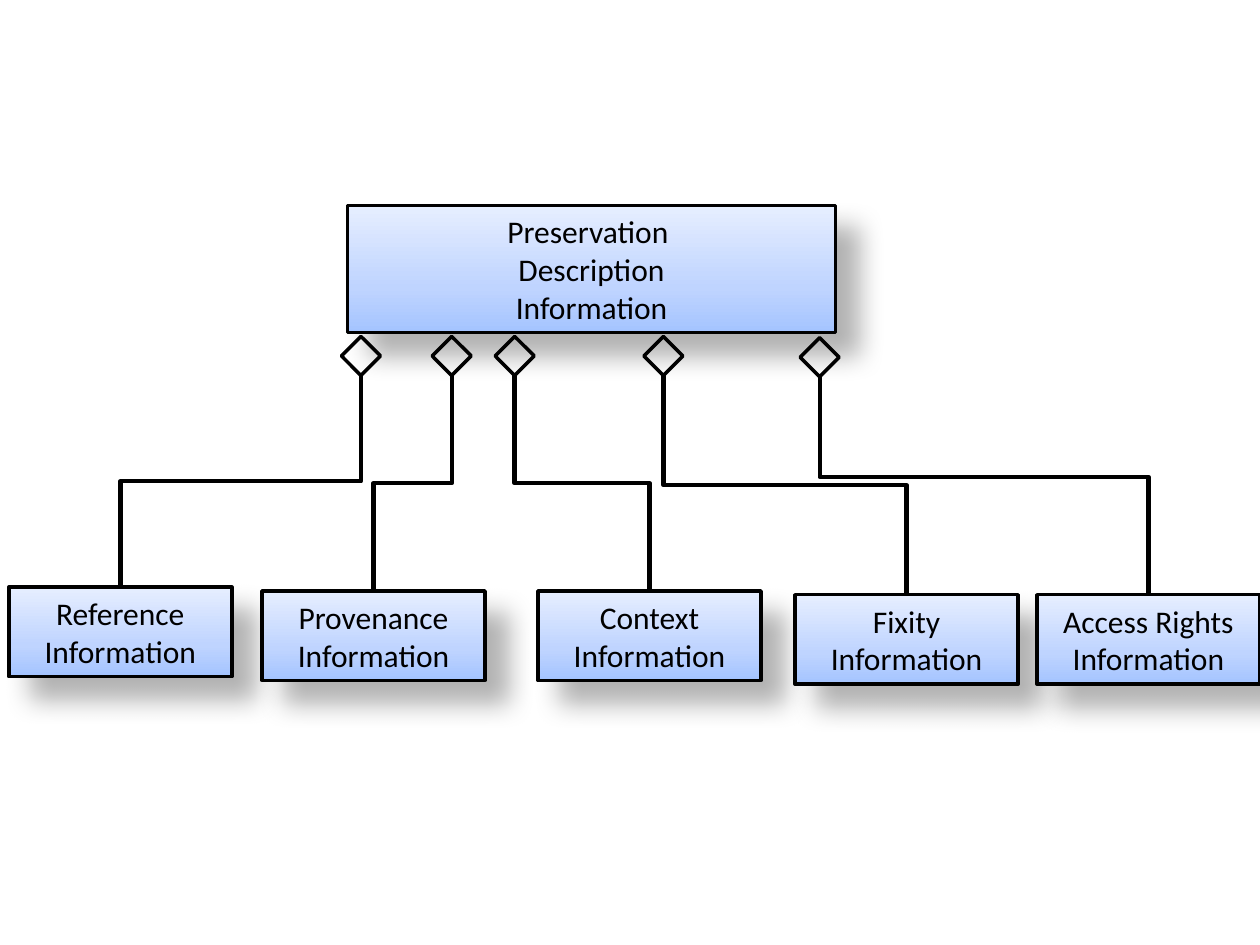
"""Build a slide showing the parts of Preservation Description Information."""
from copy import deepcopy

from lxml.etree import SubElement
from pptx import Presentation
from pptx.dml.color import RGBColor
from pptx.enum.shapes import MSO_CONNECTOR, MSO_SHAPE
from pptx.enum.text import MSO_ANCHOR, MSO_AUTO_SIZE, PP_ALIGN
from pptx.oxml.ns import qn
from pptx.util import Inches, Pt

BLACK = RGBColor(0, 0, 0)
GRADIENT = [
    (0, RGBColor(0xA4, 0xC4, 0xFF)),
    (0.35, RGBColor(0xBF, 0xD4, 0xFF)),
    (1, RGBColor(0xE6, 0xEE, 0xFF)),
]
WIDTH, HEIGHT = 10, 7.5
ROOT = (["Preservation ", "Description", "Information"], 2.76, 1.63, 3.87, 1.01)
PART_WIDTH, PART_HEIGHT = 1.77, 0.71
DIAMOND = 0.31
PARTS = [
    ("Reference", 0.07, 4.66, 2.71, 2.67, 0.5),
    ("Provenance", 2.08, 4.69, 3.43, 2.67, 0.5),
    ("Context", 4.27, 4.69, 3.93, 2.67, 0.5),
    ("Fixity", 6.31, 4.72, 5.11, 2.67, 0.5),
    ("Access Rights", 8.23, 4.72, 6.35, 2.68, 0.46),
]


def add_outlined(page, kind, left, top, width, height):
    shape = page.shapes.add_shape(kind, Inches(left), Inches(top), Inches(width), Inches(height))
    shape.shadow.inherit = False
    shape.line.color.rgb = BLACK
    shape.line.width = Pt(2)
    return shape


def fill_gradient(shape):
    shape.fill.gradient()
    shape.fill.gradient_angle = 90
    stop_list = shape._element.spPr.find(".//" + qn("a:gsLst"))
    stop_list.append(deepcopy(stop_list[-1]))
    for stop, (position, color) in zip(shape.fill.gradient_stops, GRADIENT):
        stop.position = position
        stop.color.rgb = color


def add_shadow(shape):
    effects = shape._element.spPr.find(qn("a:effectLst"))
    shadow = SubElement(effects, qn("a:outerShdw"), blurRad=str(Pt(15)), dist=str(Pt(18)),
                        dir="2700000", algn="tl", rotWithShape="0")
    color = SubElement(shadow, qn("a:srgbClr"), val=str(BLACK))
    SubElement(color, qn("a:alpha"), val="30000")


def add_box(page, lines, left, top, width, height):
    box = add_outlined(page, MSO_SHAPE.RECTANGLE, left, top, width, height)
    fill_gradient(box)
    add_shadow(box)
    frame = box.text_frame
    frame.word_wrap = True
    frame.auto_size = MSO_AUTO_SIZE.SHAPE_TO_FIT_TEXT
    frame.vertical_anchor = MSO_ANCHOR.MIDDLE
    for index, line in enumerate(lines):
        para = frame.add_paragraph() if index else frame.paragraphs[0]
        para.alignment = PP_ALIGN.CENTER
        span = para.add_run()
        span.text = line
        span.font.name = "Calibri"
        span.font.size = Pt(18)
        span.font.color.rgb = BLACK


def add_branch(page, start_x, start_y, end_x, end_y, bend):
    """Turn a horizontal elbow by a quarter so that it leaves downwards."""
    middle_x, middle_y = (start_x + end_x) / 2, (start_y + end_y) / 2
    drop, across = end_y - start_y, abs(end_x - start_x)
    rightwards = end_x > start_x
    side = drop / 2 if rightwards else -drop / 2
    branch = page.shapes.add_connector(
        MSO_CONNECTOR.ELBOW,
        Inches(middle_x + side), Inches(middle_y - across / 2),
        Inches(middle_x - side), Inches(middle_y + across / 2))
    branch.line.color.rgb = BLACK
    branch.line.width = Pt(2.5)
    properties = branch._element.spPr
    properties.find(qn("a:xfrm")).set("rot", str((270 if rightwards else 90) * 60000))
    guides = properties.find(qn("a:prstGeom")).find(qn("a:avLst"))
    SubElement(guides, qn("a:gd"), name="adj1", fmla=f"val {round(bend * 100000)}")
    SubElement(properties, qn("a:effectLst"))


def main():
    deck = Presentation()
    deck.slide_width, deck.slide_height = Inches(WIDTH), Inches(HEIGHT)
    page = deck.slides.add_slide(deck.slide_layouts[6])
    add_box(page, *ROOT)
    for name, left, top, diamond_left, diamond_top, bend in PARTS:
        add_box(page, [name, "Information"], left, top, PART_WIDTH, PART_HEIGHT)
        diamond = add_outlined(page, MSO_SHAPE.DIAMOND, diamond_left, diamond_top, DIAMOND, DIAMOND)
        diamond.fill.background()
        add_branch(page, diamond_left + DIAMOND / 2, diamond_top + DIAMOND,
                   left + PART_WIDTH / 2, top, bend)
    deck.save("out.pptx")


if __name__ == "__main__":
    main()
